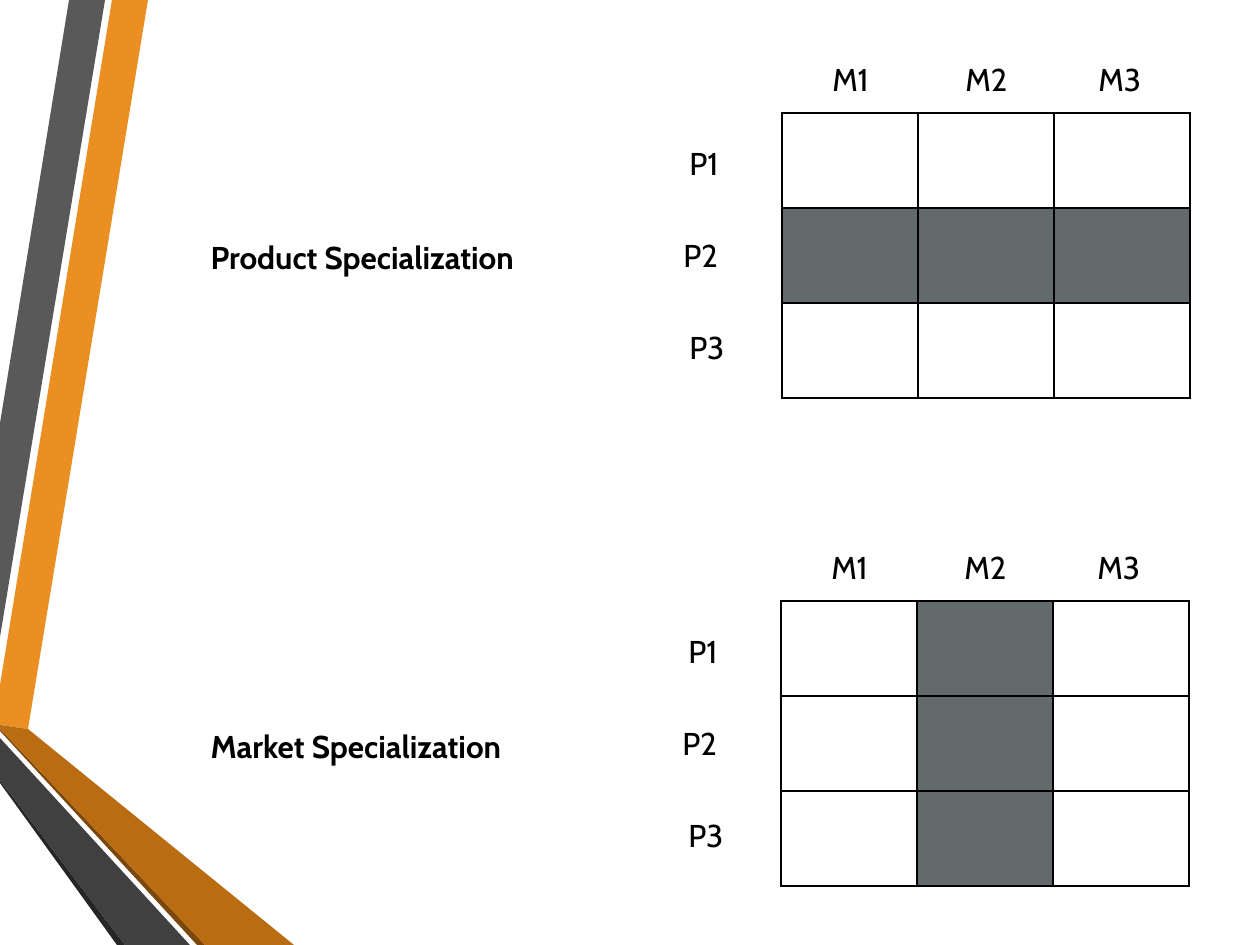
from lxml import etree
from pptx import Presentation
from pptx.dml.color import RGBColor
from pptx.enum.text import MSO_ANCHOR, MSO_AUTO_SIZE
from pptx.oxml.ns import qn
from pptx.util import Pt

PX = 914400 / 126
MIDDLE = MSO_ANCHOR.MIDDLE
NO_FIT = MSO_AUTO_SIZE.NONE
FONT = "Cabin"
BLACK = "000000"
SHADE = "636A6C"
COL_W, ROW_H, COUNT = 136, 95, 3

RIBBONS = [
    ("EB8F22", [(0, 685), (0, 725), (28, 729), (148, 0), (112, 0)]),
    ("595959", [(105, 0), (69, 0), (0, 423), (0, 637)]),
    ("262626", [(0, 780), (0, 783), (117, 945), (125, 945)]),
    ("7B480B", [(0, 729), (0, 731), (197, 945), (205, 945)]),
    ("B96C11", [(0, 729), (205, 945), (294, 945), (28, 729), (0, 725)]),
    ("404040", [(0, 780), (125, 945), (190, 945), (0, 738)]),
]


def px(n):
    """Turn pixels into EMU."""
    return round(n * PX)


def color(value):
    """Turn a hex string into a colour."""
    return RGBColor.from_string(value)


def write(tf, text, bold=False):
    """Set the text of a frame in the slide's font."""
    tf.text = text
    font = tf.paragraphs[0].runs[0].font
    font.name, font.size, font.bold = FONT, Pt(18), bold
    font.color.rgb = color(BLACK)


def add_ribbons(s):
    """Draw the folded ribbons along the left edge."""
    for fill, points in RIBBONS:
        builder = s.shapes.build_freeform(*points[0], scale=PX)
        builder.add_line_segments(points[1:], close=True)
        sp = builder.convert_to_shape()
        sp.shadow.inherit = False
        sp.fill.solid()
        sp.fill.fore_color.rgb = color(fill)
        sp.line.fill.background()


def place_heading(sp, text, x, y):
    """Move a text placeholder into place and fill it."""
    sp.left, sp.top, sp.width, sp.height = px(x), px(y), px(474), px(49)
    tf = sp.text_frame
    write(tf, text, bold=True)
    tf.auto_size = NO_FIT
    tf.vertical_anchor = MIDDLE
    tf.paragraphs[0].space_after = Pt(6)


def add_label(s, text, x, y, w):
    """Add a row or column label."""
    sp = s.shapes.add_textbox(px(x), px(y), px(w), px(50))
    sp.text_frame.word_wrap = True
    write(sp.text_frame, text)


def set_borders(cell):
    """Give a cell thin black borders on all sides."""
    tc_pr = cell._tc.get_or_add_tcPr()
    for i, side in enumerate(("a:lnL", "a:lnR", "a:lnT", "a:lnB")):
        ln = etree.Element(qn(side), w=str(Pt(1)))
        fill = etree.SubElement(ln, qn("a:solidFill"))
        etree.SubElement(fill, qn("a:srgbClr"), val=BLACK)
        tc_pr.insert(i, ln)


def add_matrix(s, x, y, is_shaded):
    """Add a product-market grid with its labels around the given corner."""
    frame = s.shapes.add_table(COUNT, COUNT, px(x), px(y),
                               px(COUNT * COL_W), px(COUNT * ROW_H))
    table = frame.table
    table.first_row = table.horz_banding = False
    for i in range(COUNT):
        table.columns[i].width = px(COL_W)
        table.rows[i].height = px(ROW_H)
        indent = 6 if i == 1 else 0
        add_label(s, f"P{i + 1}", x - 105 - indent, y + 25 + 92 * i, 62)
        add_label(s, f"M{i + 1}", x + 38 + 133 * i, y - 59, 76)
        for j in range(COUNT):
            cell = table.cell(i, j)
            if is_shaded(i, j):
                cell.fill.solid()
                cell.fill.fore_color.rgb = color(SHADE)
            else:
                cell.fill.background()
            set_borders(cell)


def main():
    """Build and save the slide."""
    prs = Presentation()
    prs.slide_width, prs.slide_height = px(1260), px(945)
    s = prs.slides.add_slide(prs.slide_layouts[4])
    headings = {1: ("Product Specialization", 232), 3: ("Market Specialization", 721)}
    for sp in list(s.placeholders):
        idx = sp.placeholder_format.idx
        if idx in headings:
            text, y = headings[idx]
            place_heading(sp, text, 198, y)
        else:
            sp.element.getparent().remove(sp.element)
    add_ribbons(s)
    add_matrix(s, 782, 113, lambda row, col: row == 1)
    add_matrix(s, 781, 601, lambda row, col: col == 1)
    prs.save("out.pptx")


if __name__ == "__main__":
    main()
